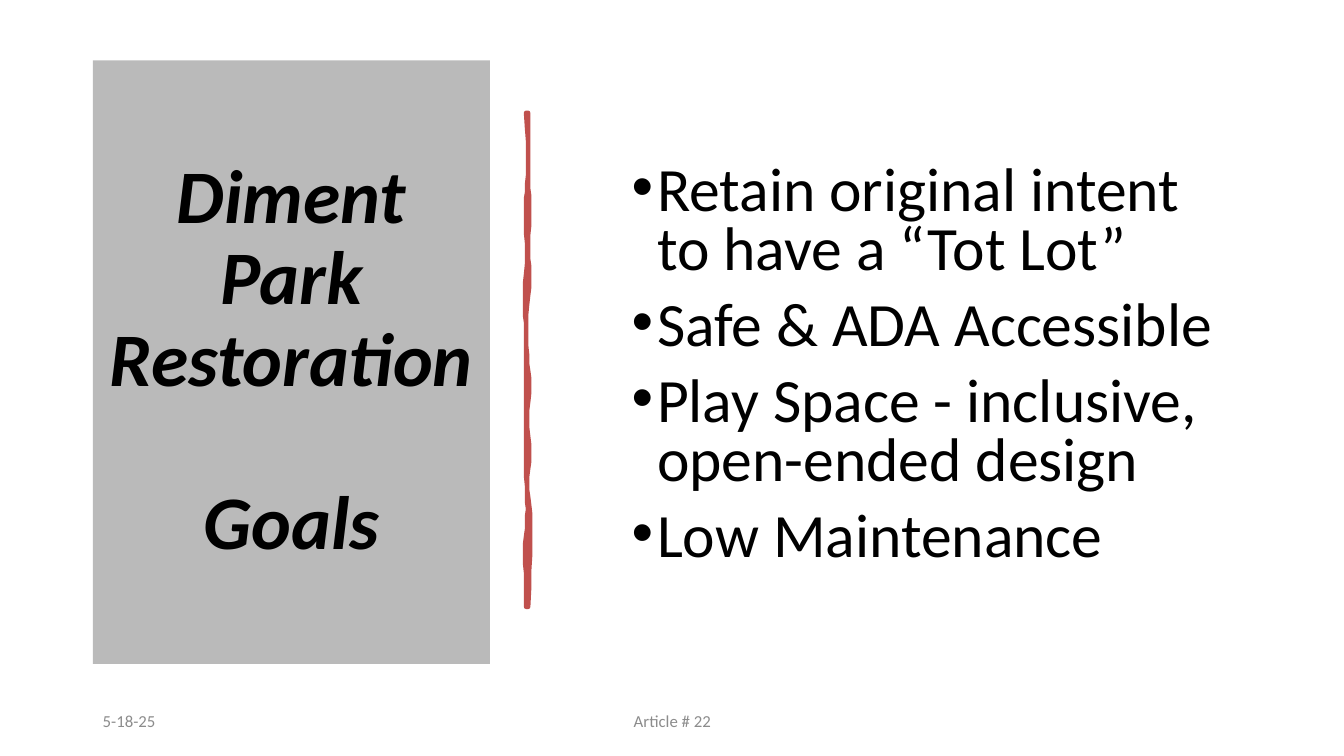
from pptx import Presentation
from pptx.dml.color import RGBColor
from pptx.enum.shapes import MSO_SHAPE
from pptx.enum.text import MSO_ANCHOR, PP_ALIGN
from pptx.oxml.ns import qn
from pptx.util import Cm, Pt
from lxml.etree import SubElement

TITLE_FORMAT = {"size": Pt(54), "name": "Calibri", "bold": True, "italic": True}
GOAL_FORMAT = {"size": Pt(44), "name": "Calibri"}
FOOTER_FORMAT = {"size": Pt(12), "name": "Calibri"}

GOALS = [
    "Retain original intent to have a “Tot Lot”",
    "Safe & ADA Accessible",
    "Play Space - inclusive, open-ended design",
    "Low Maintenance",
]

BRUSH_UNIT = Cm(0.0254)
BRUSH_START = (524, 112)
BRUSH_CURVES = [
    [(523, 142), (524, 149), (524, 177)],
    [(525, 206), (526, 207), (524, 233)],
    [(523, 259), (527, 269), (524, 293)],
    [(521, 317), (522, 350), (524, 368)],
    [(527, 386), (521, 410), (524, 433)],
    [(527, 456), (521, 476), (524, 493)],
    [(527, 511), (526, 551), (524, 602)],
    [(523, 602), (523, 602), (522, 602)],
    [(523, 584), (520, 553), (522, 532)],
    [(524, 512), (524, 500), (522, 472)],
    [(521, 444), (523, 422), (522, 392)],
    [(521, 363), (523, 347), (522, 327)],
    [(521, 307), (520, 297), (522, 272)],
    [(525, 247), (520, 212), (522, 197)],
    [(524, 182), (525, 152), (522, 112)],
]


def paint(color_format, hex_color):
    color_format.rgb = RGBColor.from_string(hex_color)


def style(paragraph, text_format, hex_color):
    for attribute, value in text_format.items():
        setattr(paragraph.font, attribute, value)
    paint(paragraph.font.color, hex_color)


def add_title_panel(slide, text):
    panel = slide.shapes.add_shape(
        MSO_SHAPE.RECTANGLE, Cm(2.34), Cm(1.52), Cm(10.01), Cm(15.21))
    panel.shadow.inherit = False
    panel.fill.solid()
    paint(panel.fill.fore_color, "BABABA")
    panel.line.fill.background()
    frame = panel.text_frame
    frame.word_wrap = True
    frame.vertical_anchor = MSO_ANCHOR.MIDDLE
    title = frame.paragraphs[0]
    title.text = text
    title.alignment = PP_ALIGN.CENTER
    title.line_spacing = 0.9
    style(title, TITLE_FORMAT, "000000")


def curve_points(start, bend_out, bend_in, end, steps=8):
    for step in range(1, steps + 1):
        t = step / steps
        weights = ((1 - t) ** 3, 3 * t * (1 - t) ** 2, 3 * t ** 2 * (1 - t), t ** 3)
        corners = (start, bend_out, bend_in, end)
        yield tuple(sum(w * c[axis] for w, c in zip(weights, corners)) for axis in (0, 1))


def add_brush_divider(slide):
    outline = []
    start = BRUSH_START
    for curve in BRUSH_CURVES:
        outline.extend(curve_points(start, *curve))
        start = curve[-1]
    builder = slide.shapes.build_freeform(*BRUSH_START, scale=BRUSH_UNIT)
    builder.add_line_segments(outline, close=True)
    divider = builder.convert_to_shape()
    divider.shadow.inherit = False
    divider.fill.solid()
    paint(divider.fill.fore_color, "C0504D")
    paint(divider.line.color, "C0504D")
    divider.line.width = Pt(3.25)
    SubElement(divider.line.fill._xPr, qn("a:round"))


def add_text_frame(slide, left, top, width, height):
    frame = slide.shapes.add_textbox(Cm(left), Cm(top), Cm(width), Cm(height)).text_frame
    frame.word_wrap = True
    frame.vertical_anchor = MSO_ANCHOR.MIDDLE
    return frame


def add_bullet(paragraph):
    properties = paragraph._p.get_or_add_pPr()
    properties.set("marL", str(Cm(2.06)))
    properties.set("indent", str(-Cm(0.64)))
    SubElement(properties, qn("a:buFont"), typeface="Arial")
    SubElement(properties, qn("a:buChar"), char="•")


def add_goals(slide, goals):
    frame = add_text_frame(slide, 14.25, 2.36, 17.02, 13.77)
    for index, text in enumerate(goals):
        goal = frame.add_paragraph() if index else frame.paragraphs[0]
        goal.text = text
        add_bullet(goal)
        goal.line_spacing = 0.8
        goal.space_before = Pt(6 if index else 0)
        goal.space_after = Pt(6)
        style(goal, GOAL_FORMAT, "000000")


def add_footer(slide, text, left, width, alignment):
    footer = add_text_frame(slide, left, 17.65, width, 1.02).paragraphs[0]
    footer.text = text
    footer.alignment = alignment
    style(footer, FOOTER_FORMAT, "8C8C8C")


def main():
    presentation = Presentation()
    presentation.slide_width = Cm(33.87)
    presentation.slide_height = Cm(19.05)
    slide = presentation.slides.add_slide(presentation.slide_layouts[6])
    add_title_panel(slide, "Diment Park Restoration\v\vGoals")
    add_brush_divider(slide)
    add_goals(slide, GOALS)
    add_footer(slide, "5-18-25", 2.34, 7.62, PP_ALIGN.LEFT)
    add_footer(slide, "Article # 22", 11.23, 11.43, PP_ALIGN.CENTER)
    presentation.save("out.pptx")


if __name__ == "__main__":
    main()
